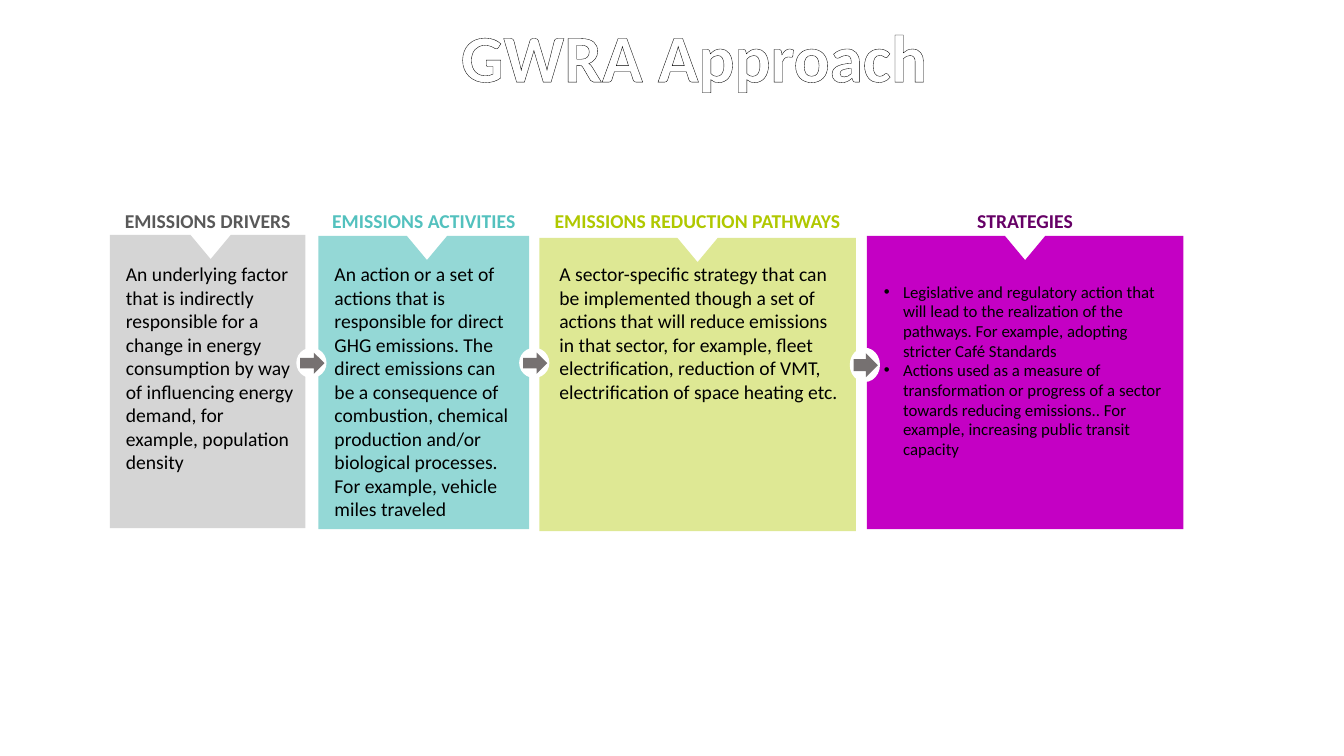
from dataclasses import dataclass
from lxml.etree import SubElement
from pptx import Presentation
from pptx.dml.color import RGBColor
from pptx.enum.shapes import MSO_SHAPE
from pptx.enum.text import PP_ALIGN
from pptx.oxml import parse_xml
from pptx.oxml.ns import nsdecls, qn
from pptx.util import Inches, Pt

WIDE, HIGH = Inches(13.333), Inches(7.5)


@dataclass(frozen=True)
class Theme:
    font: str = "Calibri"
    ink: str = "000000"
    white: str = "FFFFFF"
    arrow: str = "767171"
    title: int = 48
    text: int = 14
    small: int = 12
    edge: float = 1.75


THEME = Theme()

# Boxes are (left, top, width, height) in percent of the slide.
TITLE = (3.3, 2.53, 96.7, 11.07)
HEAD = (26.93, 4.53)  # top, height
NOTCH = (1.5, 3.2)  # half width, depth

# box, fill, notch share, heading, heading colour, text box, bulleted, texts
CARDS = [
    ((8.18, 31.07, 14.55, 38.8), "D5D5D5", 0.515, "EMISSIONS DRIVERS", "595959",
     (8.63, 34, 14.18, 29.6), False,
     ["An underlying factor that is indirectly responsible for a change in energy "
      "consumption by way of influencing energy demand, for example, population density"]),
    ((23.7, 31.2, 15.68, 38.8), "94D8D6", 0.515, "EMISSIONS ACTIVITIES", "53C1BE",
     (24.15, 34, 14.48, 35.87), False,
     ["An action or a set of actions that is responsible for direct GHG emissions. "
      "The direct emissions can be a consequence of combustion, chemical production "
      "and/or biological processes. For example, vehicle miles traveled"]),
    ((40.13, 31.47, 23.55, 38.8), "DEE894", 0.5, "EMISSIONS REDUCTION PATHWAYS", "B0C800",
     (40.88, 34, 22.65, 20.13), False,
     ["A sector-specific strategy that can be implemented though a set of actions that "
      "will reduce emissions in that sector, for example, fleet electrification, "
      "reduction of VMT, electrification of space heating etc."]),
    ((64.5, 31.2, 23.55, 38.8), "C400C4", 0.5, "STRATEGIES", "660066",
     (65.03, 36.67, 23.03, 30.13), True,
     ["Legislative and regulatory action that will lead to the realization of the "
      "pathways. For example, adopting stricter Café Standards",
      "Actions used as a measure of transformation or progress of a sector towards "
      "reducing emissions.. For example, increasing public transit capacity"]),
]

BADGES = [(22.05, 46, 2.25, 4), (38.63, 46, 2.25, 4), (63.23, 46, 2.25, 4.53)]


def place(box):
    x, y, w, h = box
    return [round(part) for part in
            (x * WIDE / 100, y * HIGH / 100, w * WIDE / 100, h * HIGH / 100)]


def apply(item, **form):
    for name, value in form.items():
        setattr(item, name, value)


def paint(shape, color):
    shape.shadow.inherit = False
    shape.fill.solid()
    shape.fill.fore_color.rgb = RGBColor.from_string(color)
    shape.line.fill.background()


def write(slide, box, texts, size, color, bold=False, **form):
    frame = slide.shapes.add_textbox(*place(box)).text_frame
    frame.word_wrap = True
    for index, text in enumerate(texts):
        para = frame.add_paragraph() if index else frame.paragraphs[0]
        apply(para, **form)
        run = para.add_run()
        run.text = text
        apply(run.font, name=THEME.font, size=Pt(size), bold=bold)
        run.font.color.rgb = RGBColor.from_string(color)
    return frame


def bullet(frame):
    for para in frame.paragraphs:
        props = para._p.get_or_add_pPr()
        apply_indent = Inches(0.19)
        props.set("marL", str(apply_indent))
        props.set("indent", str(-apply_indent))
        SubElement(props, qn("a:buFont")).set("typeface", "Arial")
        SubElement(props, qn("a:buChar")).set("char", "•")


def header(slide, box):
    frame = write(slide, box, ["GWRA Approach"], THEME.title, THEME.white, True,
                  alignment=PP_ALIGN.CENTER, line_spacing=0.9)
    # Outlined letters
    line = parse_xml(f'<a:ln {nsdecls("a")} w="{Pt(THEME.edge)}"><a:solidFill>'
                     f'<a:srgbClr val="{THEME.ink}"/></a:solidFill></a:ln>')
    frame.paragraphs[0].runs[0]._r.get_or_add_rPr().insert(0, line)


def card(slide, box, fill, share, head, color, area, listed, texts):
    # Panel with a notch in its top edge
    left, top, width, height = place(box)
    _, _, half, depth = place((0, 0, *NOTCH))
    right, base, mid = left + width, top + height, left + round(width * share)
    path = slide.shapes.build_freeform(left, top)
    path.add_line_segments([(mid - half, top), (mid, top + depth), (mid + half, top),
                            (right, top), (right, base), (left, base)])
    paint(path.convert_to_shape(), fill)
    # Heading above, text inside
    write(slide, (box[0], HEAD[0], box[2], HEAD[1]), [head], THEME.text, color, True,
          alignment=PP_ALIGN.CENTER)
    if listed:
        bullet(write(slide, area, texts, THEME.small, THEME.ink, line_spacing=Pt(14)))
    else:
        write(slide, area, texts, THEME.text, THEME.ink)


def badge(slide, box):
    x, y, w, h = box
    group = slide.shapes.add_group_shape()
    inner = (x + 0.13 * w, y + 0.16 * h, 0.8 * w, 0.7 * h)
    for kind, area, color in ((MSO_SHAPE.OVAL, box, THEME.white),
                              (MSO_SHAPE.RIGHT_ARROW, inner, THEME.arrow)):
        paint(group.shapes.add_shape(kind, *place(area)), color)


def main():
    deck = Presentation()
    apply(deck, slide_width=WIDE, slide_height=HIGH)
    slide = deck.slides.add_slide(deck.slide_layouts[6])
    for row in CARDS:
        card(slide, *row)
    for box in BADGES:
        badge(slide, box)
    header(slide, TITLE)
    deck.save("out.pptx")


if __name__ == "__main__":
    main()
